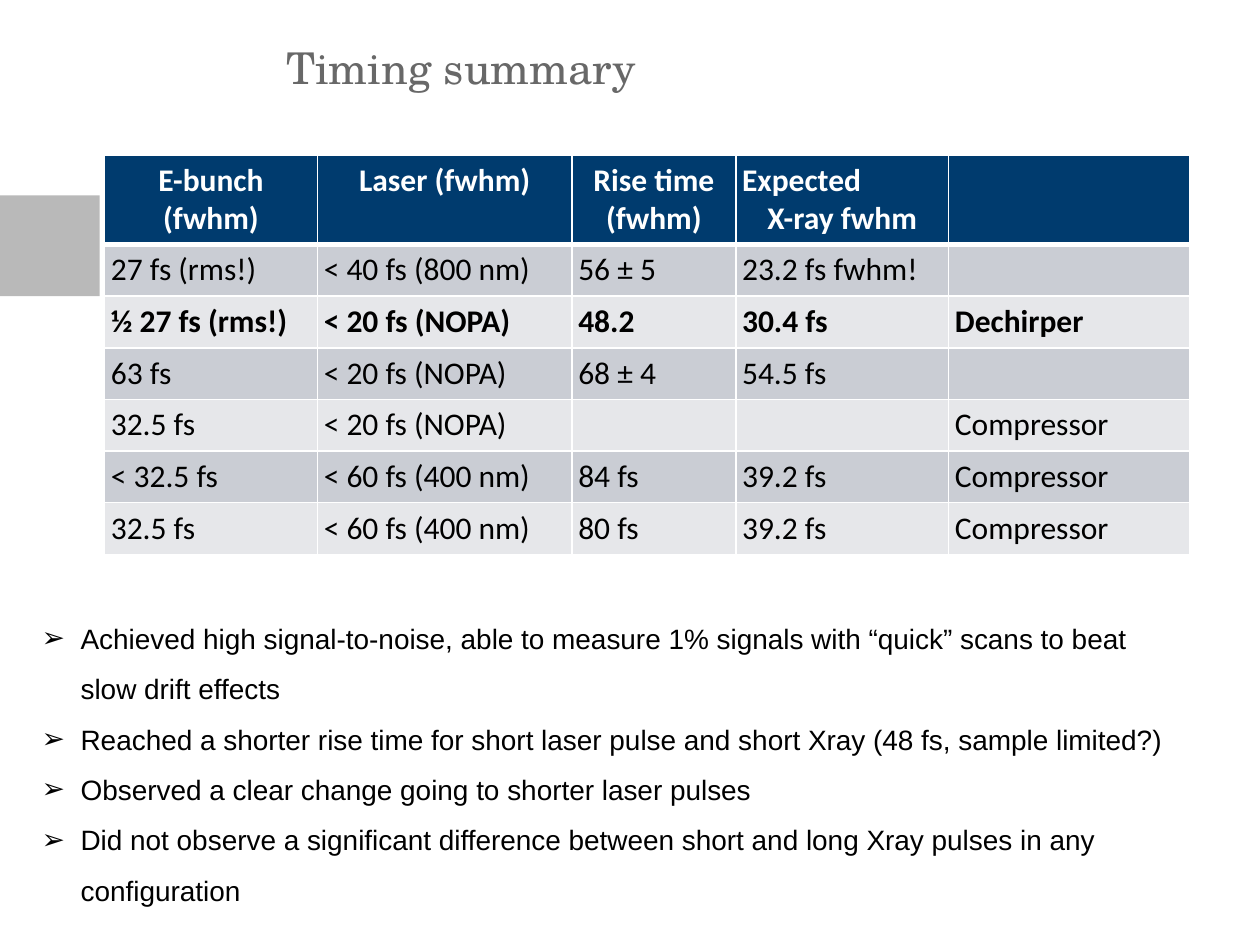
from lxml import etree
from pptx import Presentation
from pptx import util as u
from pptx.dml.color import RGBColor
from pptx.enum import shapes, text
from pptx.oxml import ns


def colour(value):
    return RGBColor.from_string(value)


def write(para, words, size=18, font="Calibri", color="000000", bold=False,
          align=text.PP_ALIGN.LEFT):
    para.alignment = align
    span = para.add_run()
    span.text = words
    span.font.size = u.Pt(size)
    span.font.name = font
    span.font.bold = bold
    span.font.color.rgb = colour(color)


deck = Presentation()
deck.slide_width, deck.slide_height = u.Inches(10), u.Inches(7.5)
page = deck.slides.add_slide(deck.slide_layouts[1])
title, body = page.placeholders

accent = page.shapes.add_shape(shapes.MSO_SHAPE.RECTANGLE, u.Inches(0), u.Inches(1.55),
                               u.Inches(0.79), u.Inches(0.8))
accent.shadow.inherit = False
accent.fill.solid()
accent.fill.fore_color.rgb = colour("B9B9B9")
accent.line.fill.background()

for holder, area, inset in ((title, (2.27, 0.32, 7.34, 0.56), 0),
                            (body, (0.28, 4.75, 9.18, 2.2), 0.05)):
    holder.left, holder.top, holder.width, holder.height = map(u.Inches, area)
    frame = holder.text_frame
    frame.word_wrap = True
    frame.auto_size = text.MSO_AUTO_SIZE.NONE
    frame.vertical_anchor = text.MSO_ANCHOR.TOP
    frame.margin_left = frame.margin_right = u.Inches(inset)
    frame.margin_top = frame.margin_bottom = u.Inches(inset)

write(title.text_frame.paragraphs[0], "Timing summary", size=25,
      font="TeX Gyre Schola", color="686868")

findings = [
    "Achieved high signal-to-noise, able to measure 1% signals with “quick” scans to beat slow drift effects",
    "Reached a shorter rise time for short laser pulse and short Xray (48 fs, sample limited?)",
    "Observed a clear change going to shorter laser pulses",
    "Did not observe a significant difference between short and long Xray pulses in any configuration",
]
for number, finding in enumerate(findings):
    frame = body.text_frame
    para = frame.add_paragraph() if number else frame.paragraphs[0]
    para.line_spacing = 1.5
    para.space_before = para.space_after = u.Pt(0)
    props = para._p.get_or_add_pPr()
    props.set("marL", str(u.Inches(0.31)))
    props.set("indent", str(-u.Inches(0.31)))
    etree.SubElement(props, ns.qn("a:buFont"), typeface="Arial")
    etree.SubElement(props, ns.qn("a:buChar"), char="➢")
    write(para, finding, size=16, font="Arial")

rows = [
    ["E-bunch (fwhm)", "Laser (fwhm)", "Rise time (fwhm)", "Expected\nX-ray fwhm", ""],
    ["27 fs (rms!)", "< 40 fs (800 nm)", "56 ± 5", "23.2 fs fwhm!", ""],
    ["½ 27 fs (rms!)", "< 20 fs (NOPA)", "48.2", "30.4 fs", "Dechirper"],
    ["63 fs", "< 20 fs (NOPA)", "68 ± 4", "54.5 fs", ""],
    ["32.5 fs", "< 20 fs (NOPA)", "", "", "Compressor"],
    ["< 32.5 fs", "< 60 fs (400 nm)", "84 fs", "39.2 fs", "Compressor"],
    ["32.5 fs", "< 60 fs (400 nm)", "80 fs", "39.2 fs", "Compressor"],
]
widths = [1.69, 2.02, 1.3, 1.69, 1.91]
table = page.shapes.add_table(len(rows), len(widths), u.Inches(0.83), u.Inches(1.23),
                              u.Inches(8.6), u.Inches(3.13)).table
for column, width in zip(table.columns, widths):
    column.width = u.Inches(width)

for r, row in enumerate(rows):
    header = r == 0
    table.rows[r].height = u.Inches(0.41 if r else 0.69)
    for c, words in enumerate(row):
        cell = table.cell(r, c)
        cell.margin_left = cell.margin_right = u.Inches(0.05)
        cell.margin_top = cell.margin_bottom = u.Inches(0.05)
        props = cell._tc.get_or_add_tcPr()
        for side in ("lnL", "lnR", "lnT", "lnB"):
            thick = (r, side) in ((0, "lnB"), (1, "lnT"))
            edge = etree.SubElement(props, ns.qn("a:" + side), w=str(u.Pt(3 if thick else 1)))
            paint = etree.SubElement(edge, ns.qn("a:solidFill"))
            etree.SubElement(paint, ns.qn("a:srgbClr"), val="FFFFFF")
        cell.fill.solid()
        cell.fill.fore_color.rgb = colour("003B6E" if header else ("E6E7EA", "CACDD4")[r % 2])
        for number, line in enumerate(words.split("\n")):
            frame = cell.text_frame
            para = frame.add_paragraph() if number else frame.paragraphs[0]
            centred = header and line != "Expected"
            write(para, line, color="FFFFFF" if header else "000000", bold=r in (0, 2),
                  align=text.PP_ALIGN.CENTER if centred else text.PP_ALIGN.LEFT)

deck.save("out.pptx")
